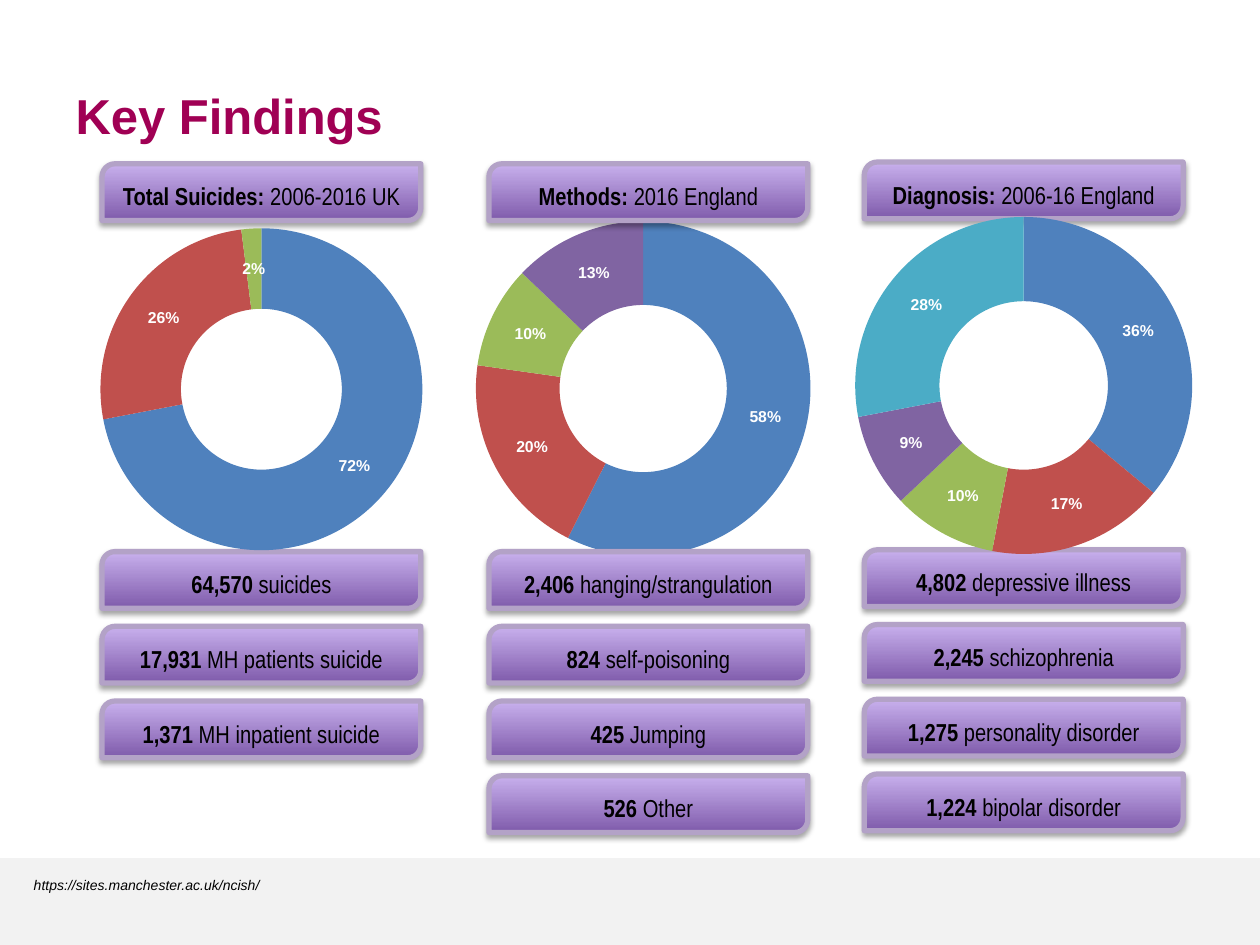
from dataclasses import dataclass

from lxml.etree import SubElement
from pptx import Presentation
from pptx.chart.data import CategoryChartData
from pptx.dml.color import RGBColor
from pptx.enum.chart import XL_CHART_TYPE
from pptx.enum.shapes import MSO_SHAPE
from pptx.enum.text import MSO_ANCHOR, PP_ALIGN
from pptx.oxml import parse_xml
from pptx.oxml.ns import nsdecls, qn
from pptx.util import Pt

BLACK = RGBColor(0x00, 0x00, 0x00)
WHITE = RGBColor(0xFF, 0xFF, 0xFF)
MAGENTA = RGBColor(0xA0, 0x00, 0x54)
FOOTER_GREY = RGBColor(0xF2, 0xF2, 0xF2)
BUTTON_DARK = RGBColor(0x7F, 0x5B, 0xAB)
BUTTON_LIGHT = RGBColor(0xC8, 0xB0, 0xED)
BUTTON_BORDER = RGBColor(0xB3, 0xA2, 0xC7)
SLICE_COLORS = [
    RGBColor(0x4F, 0x81, 0xBD),
    RGBColor(0xC0, 0x50, 0x4D),
    RGBColor(0x9B, 0xBB, 0x59),
    RGBColor(0x80, 0x64, 0xA2),
    RGBColor(0x4B, 0xAC, 0xC6),
]

BUTTON_WIDTH, BUTTON_HEIGHT = 182.2, 32.4
HEADER_TOP, FIRST_ROW_TOP, ROW_PITCH = 93.6, 315.2, 42.7


@dataclass
class Column:
    left: float
    shift: float
    header: tuple
    rows: list
    values: list
    chart_box: tuple
    ring: float
    chart_in_front: bool


COLUMNS = [
    Column(58.3, 0, ("Total Suicides: ", "2006-2016 UK"),
           [("64,570", " suicides"), ("17,931", " MH patients suicide"),
            ("1,371", " MH inpatient suicide")],
           [72, 26, 2], (47.5, 114.5, 203.8, 216), 184, True),
    Column(279.4, 0, ("Methods: ", "2016 England"),
           [("2,406", " hanging/strangulation"), ("824", " self-poisoning"),
            ("425", " Jumping"), ("526", " Other")],
           [58, 20, 10, 13], (252, 116.6, 231.1, 211), 191.2, False),
    Column(493.9, -1, ("Diagnosis: ", "2006-16 England"),
           [("4,802", " depressive illness"), ("2,245", " schizophrenia"),
            ("1,275 ", "personality disorder"), ("1,224", " bipolar disorder")],
           [36, 17, 10, 9, 28], (478.8, 112.3, 212.4, 216), 192.6, True),
]


def format_font(font, name, size, color, bold=False, italic=False):
    font.name = name
    font.size = Pt(size)
    font.color.rgb = color
    font.bold = bold
    font.italic = italic


def add_footer(slide):
    band = slide.shapes.add_shape(
        MSO_SHAPE.RECTANGLE, Pt(0), Pt(490.3), Pt(720), Pt(49.7))
    band.shadow.inherit = False
    band.fill.solid()
    band.fill.fore_color.rgb = FOOTER_GREY
    band.line.fill.background()

    source = slide.shapes.add_textbox(Pt(12.2), Pt(497.5), Pt(602), Pt(17.3))
    source.text_frame.word_wrap = True
    source.text_frame.text = "https://sites.manchester.ac.uk/ncish/"
    run = source.text_frame.paragraphs[0].runs[0]
    format_font(run.font, "Arial", 8, BLACK, italic=True)


def format_title(title):
    title.left, title.top, title.width, title.height = Pt(36), Pt(41.8), Pt(648), Pt(59.8)
    frame = title.text_frame
    frame.text = "Key Findings"
    frame.vertical_anchor = MSO_ANCHOR.TOP
    frame.margin_top = Pt(7)
    paragraph = frame.paragraphs[0]
    paragraph.alignment = PP_ALIGN.LEFT
    format_font(paragraph.runs[0].font, "Arial", 28, MAGENTA, bold=True)


def add_soft_shadow(shape):
    shape.shadow.inherit = False
    effects = shape.element.spPr.find(qn("a:effectLst"))
    shadow = SubElement(effects, qn("a:outerShdw"), blurRad=str(Pt(3.1)),
                        dist=str(Pt(1.8)), dir="5400000", rotWithShape="0")
    color = SubElement(shadow, qn("a:srgbClr"), val=str(BLACK))
    SubElement(color, qn("a:alpha"), val="35000")


def add_button(slide, left, top, texts):
    group = slide.shapes.add_group_shape()
    shape = group.shapes.add_shape(
        MSO_SHAPE.ROUND_2_DIAG_RECTANGLE,
        Pt(left), Pt(top), Pt(BUTTON_WIDTH), Pt(BUTTON_HEIGHT))
    shape.adjustments[0] = 0.23
    shape.adjustments[1] = 0
    shape.fill.gradient()
    shape.fill.gradient_angle = 90
    for stop, color in zip(shape.fill.gradient_stops, (BUTTON_DARK, BUTTON_LIGHT)):
        stop.color.rgb = color
    shape.line.color.rgb = BUTTON_BORDER
    shape.line.width = Pt(3)
    add_soft_shadow(shape)

    label = group.shapes.add_textbox(
        Pt(left), Pt(top + 4.7), Pt(BUTTON_WIDTH), Pt(27.4))
    label.text_frame.word_wrap = True
    label.text_frame.vertical_anchor = MSO_ANCHOR.MIDDLE
    paragraph = label.text_frame.paragraphs[0]
    paragraph.alignment = PP_ALIGN.CENTER
    for text, bold in zip(texts, (True, False)):
        run = paragraph.add_run()
        run.text = text
        format_font(run.font, "Arial Narrow", 14, BLACK, bold=bold)


def fix_ring_size(chart, ring, width, height):
    plot_area = chart.element.find(qn("c:chart")).find(qn("c:plotArea"))
    for layout in plot_area.findall(qn("c:layout")):
        plot_area.remove(layout)
    share_x, share_y = ring / width, ring / height
    settings = [("layoutTarget", "inner"), ("xMode", "edge"), ("yMode", "edge"),
                ("x", (1 - share_x) / 2), ("y", (1 - share_y) / 2),
                ("w", share_x), ("h", share_y)]
    items = "".join(f'<c:{name} val="{value}"/>' for name, value in settings)
    plot_area.insert(0, parse_xml(
        f'<c:layout {nsdecls("c")}><c:manualLayout>{items}</c:manualLayout></c:layout>'))


def clear_chart_background(chart):
    chart.element.find(qn("c:chart")).addnext(parse_xml(
        f'<c:spPr {nsdecls("c", "a")}><a:noFill/><a:ln><a:noFill/></a:ln></c:spPr>'))


def add_doughnut(slide, values, box, ring):
    data = CategoryChartData()
    data.categories = [str(number) for number in range(1, len(values) + 1)]
    data.add_series("Series 1", values)
    chart = slide.shapes.add_chart(
        XL_CHART_TYPE.DOUGHNUT, *(Pt(length) for length in box), data).chart
    chart.has_title = False
    chart.has_legend = False
    format_font(chart.font, "Arial", 10, BLACK)
    clear_chart_background(chart)
    fix_ring_size(chart, ring, box[2], box[3])

    plot = chart.plots[0]
    plot.vary_by_categories = True
    series = plot.series[0]
    for index, color in enumerate(SLICE_COLORS[:len(values)]):
        slice_format = series.points[index].format
        slice_format.fill.solid()
        slice_format.fill.fore_color.rgb = color
        slice_format.line.fill.background()
    labels = series.data_labels
    labels.show_value = True
    labels.show_percentage = False
    labels.number_format = '0"%"'
    labels.number_format_is_linked = False
    format_font(labels.font, "Arial", 9, WHITE, bold=True)


def add_column(slide, column):
    if not column.chart_in_front:
        add_doughnut(slide, column.values, column.chart_box, column.ring)
    add_button(slide, column.left, HEADER_TOP + column.shift, column.header)
    for index, texts in enumerate(column.rows):
        top = FIRST_ROW_TOP + column.shift + index * ROW_PITCH
        add_button(slide, column.left, top, texts)
    if column.chart_in_front:
        add_doughnut(slide, column.values, column.chart_box, column.ring)


def main():
    presentation = Presentation()
    presentation.slide_width, presentation.slide_height = Pt(720), Pt(540)
    slide = presentation.slides.add_slide(presentation.slide_layouts[5])
    format_title(slide.shapes.title)
    add_footer(slide)
    for column in COLUMNS:
        add_column(slide, column)
    presentation.save("out.pptx")


if __name__ == "__main__":
    main()
